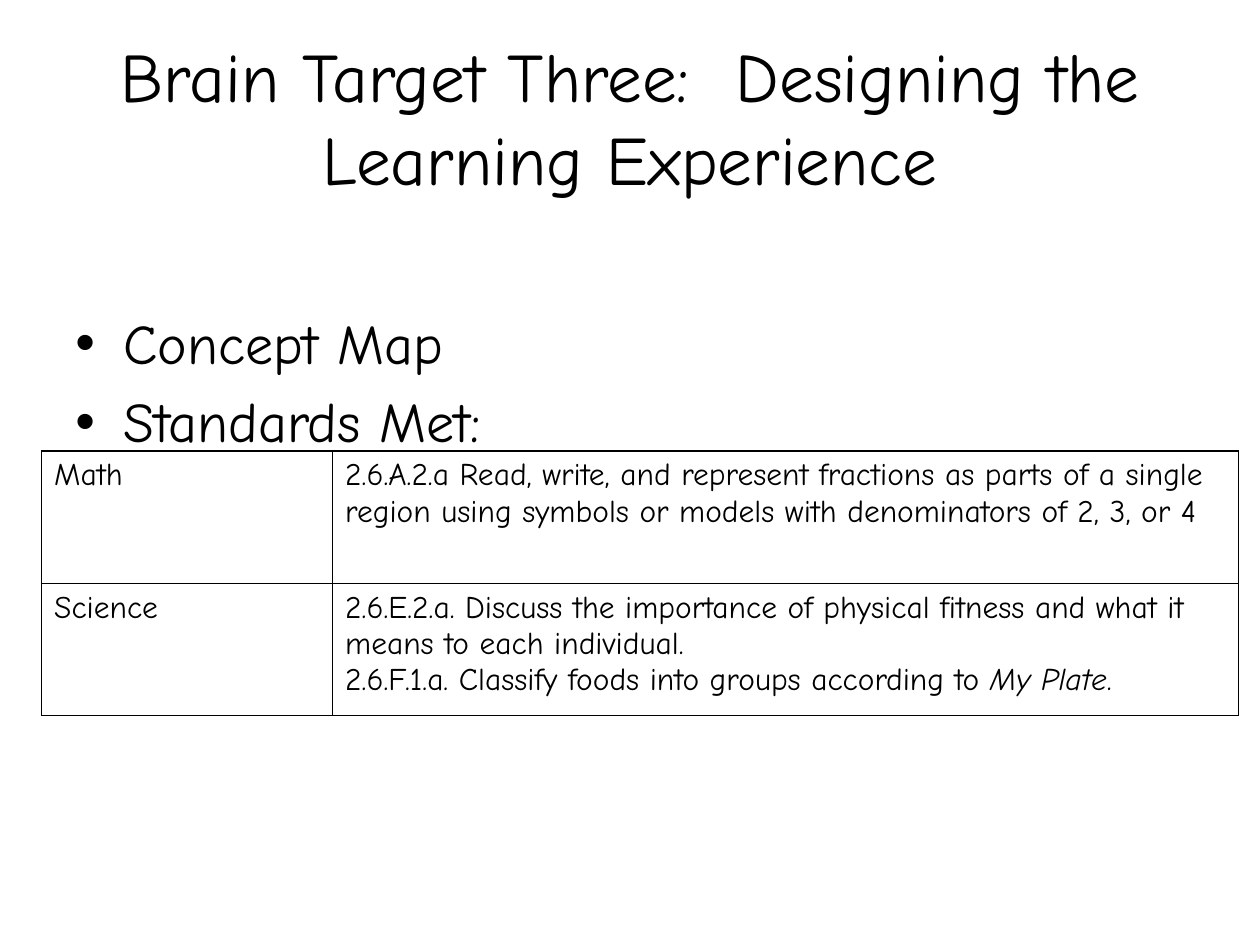
"""Build the Brain Target Three slide with its standards table."""
from lxml import etree
from pptx import Presentation
from pptx.dml.color import RGBColor
from pptx.enum.text import MSO_ANCHOR, PP_ALIGN
from pptx.oxml.ns import qn
from pptx.util import Inches, Pt

CENTER = PP_ALIGN.CENTER
MIDDLE = MSO_ANCHOR.MIDDLE
COLORS = {"text": "000000", "border": "000000", "cell": "FFFFFF"}
FONT = "Comic Neue"


def add_run(p, text, size, italic=False):
    r = p.add_run()
    r.text = text
    r.font.name = FONT
    r.font.size = Pt(size)
    r.font.italic = italic
    r.font.color.rgb = RGBColor.from_string(COLORS["text"])


def add_borders(cell):
    tcPr = cell._tc.get_or_add_tcPr()
    for side in ("lnL", "lnR", "lnT", "lnB"):
        ln = etree.SubElement(tcPr, qn(f"a:{side}"), w=str(Pt(1)))
        fill = etree.SubElement(ln, qn("a:solidFill"))
        etree.SubElement(fill, qn("a:srgbClr"), val=COLORS["border"])


prs = Presentation()
prs.slide_width = Inches(10)
prs.slide_height = Inches(7.5)
s = prs.slides.add_slide(prs.slide_layouts[6])

title = s.shapes.add_textbox(Inches(0.5), Inches(0.3), Inches(9), Inches(1.25))
tf = title.text_frame
tf.word_wrap = True
tf.vertical_anchor = MIDDLE
p = tf.paragraphs[0]
p.alignment = CENTER
add_run(p, "Brain Target Three:  Designing the Learning Experience", 39.6)

body = s.shapes.add_textbox(Inches(0.5), Inches(2.4), Inches(9), Inches(4.3))
tf = body.text_frame
tf.word_wrap = True
for i, text in enumerate(["Concept Map", "Standards Met:"]):
    p = tf.add_paragraph() if i else tf.paragraphs[0]
    pPr = p._p.get_or_add_pPr()
    pPr.set("marL", str(Inches(0.38)))
    pPr.set("indent", str(Inches(-0.38)))
    etree.SubElement(pPr, qn("a:buFont"), typeface="Arial")
    etree.SubElement(pPr, qn("a:buChar"), char="•")
    if i:
        p.space_before = Pt(6.4)
    add_run(p, text, 32)

standards = [
    [
        [[("Math", False)]],
        [[("2.6.A.2.a Read, write, and represent fractions as parts of a single "
           "region using symbols or models with denominators of 2, 3, or 4", False)]],
    ],
    [
        [[("Science", False)]],
        [
            [("2.6.E.2.a. Discuss the importance of physical fitness and what it "
              "means to each individual.", False)],
            [("2.6.F.1.a. Classify foods into groups according to ", False),
             ("My Plate", True), (".", False)],
        ],
    ],
]
frame = s.shapes.add_table(2, 2, Inches(0.33), Inches(3.58), Inches(9.5), Inches(2.1))
table = frame.table
table.first_row = False
table.horz_banding = False
for column, width in zip(table.columns, (2.31, 7.19)):
    column.width = Inches(width)
for row, contents in zip(table.rows, standards):
    row.height = Inches(1.05)
    for cell, paragraphs in zip(row.cells, contents):
        add_borders(cell)
        cell.fill.solid()
        cell.fill.fore_color.rgb = RGBColor.from_string(COLORS["cell"])
        tf = cell.text_frame
        for i, runs in enumerate(paragraphs):
            p = tf.add_paragraph() if i else tf.paragraphs[0]
            for text, italic in runs:
                add_run(p, text, 18, italic)

prs.save("out.pptx")
